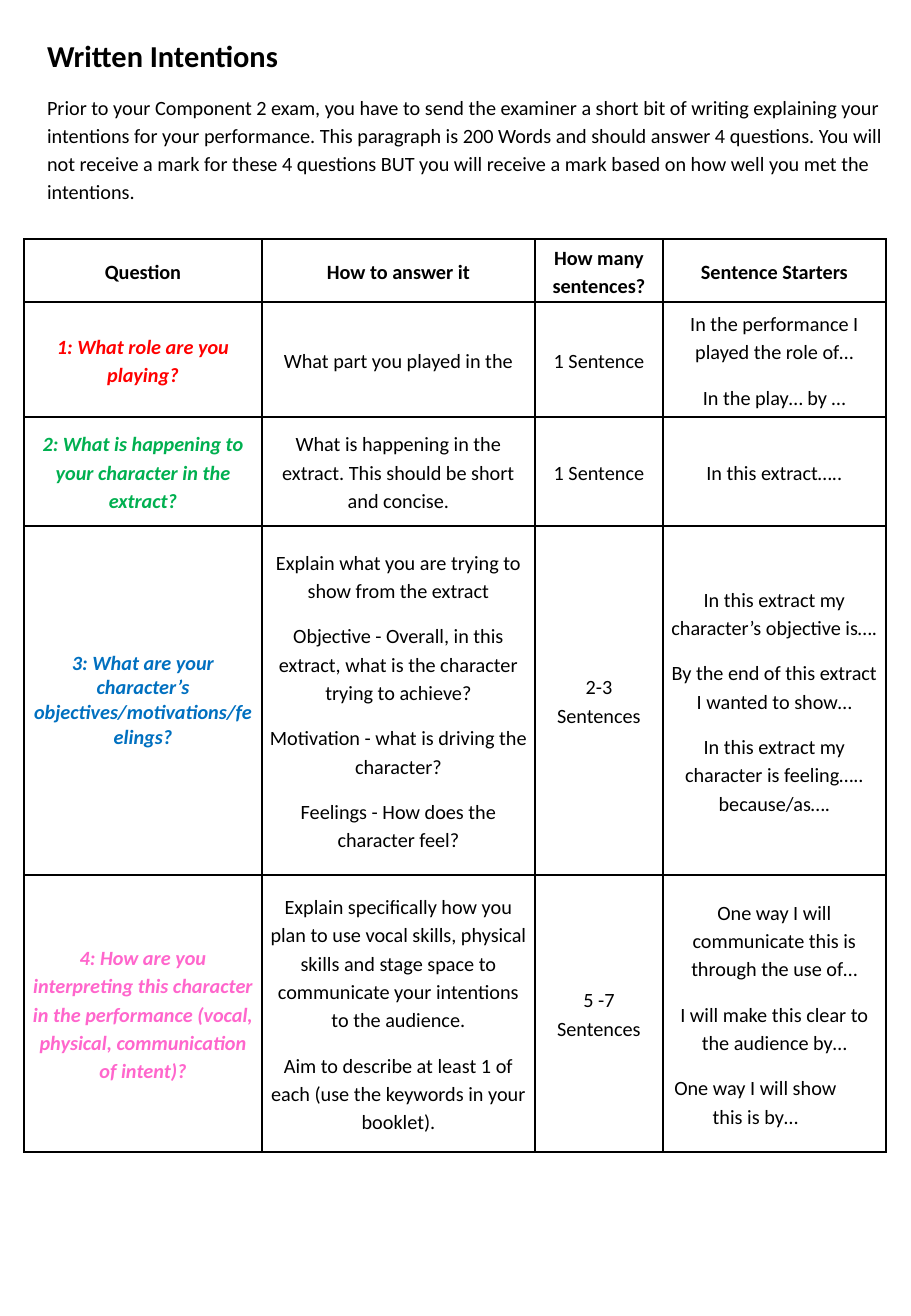
import pptx
import pptx.util
import pptx.dml.color
import pptx.enum.text
import pptx.oxml
import pptx.oxml.ns

PX = 7526
THEME = {
    "font": "Calibri", "title": 18, "text": 12,
    "ink": "000000", "paper": "FFFFFF",
    "questions": ["FF0000", "00B050", "0070C0", "FF66CC"],
}
ALIGN = pptx.enum.text.PP_ALIGN
ANCHOR = pptx.enum.text.MSO_ANCHOR
RGB = pptx.dml.color.RGBColor.from_string


def add_run(p, text, size, color, bold=False, italic=False):
    r = p.add_run()
    r.text = text
    r.font.name = THEME["font"]
    r.font.size = pptx.util.Pt(size)
    r.font.color.rgb = RGB(color)
    r.font.bold = bold
    r.font.italic = italic


def format_paragraph(p, align, after, spacing=1.15):
    p.alignment = align
    p.line_spacing = spacing
    p.space_before = pptx.util.Pt(0)
    p.space_after = pptx.util.Pt(after)


prs = pptx.Presentation()
prs.slide_width = 911 * PX
prs.slide_height = 1316 * PX
s = prs.slides.add_slide(prs.slide_layouts[1])

intro = (
    "Prior to your Component 2 exam, you have to send the examiner a short bit of writing "
    "explaining your intentions for your performance. This paragraph is 200 Words and should "
    "answer 4 questions. You will not receive a mark for these 4 questions BUT you will receive "
    "a mark based on how well you met the intentions."
)
headings = [
    (s.shapes.title, 26, 56, "Written Intentions", THEME["title"], True),
    (s.placeholders[1], 86, 126, intro, THEME["text"], False),
]
for sp, top, height, text, size, bold in headings:
    sp.left, sp.top, sp.width, sp.height = 35 * PX, top * PX, 863 * PX, height * PX
    tf = sp.text_frame
    tf.word_wrap = True
    tf.auto_size = pptx.enum.text.MSO_AUTO_SIZE.NONE
    tf.vertical_anchor = ANCHOR.TOP
    tf.margin_left = tf.margin_right = 12 * PX
    tf.margin_top = tf.margin_bottom = 6 * PX
    p = tf.paragraphs[0]
    format_paragraph(p, ALIGN.LEFT, 0)
    pPr = p._p.get_or_add_pPr()
    pPr.set("marL", "0")
    pPr.set("indent", "0")
    pPr.append(pptx.oxml.parse_xml(f'<a:buNone {pptx.oxml.ns.nsdecls("a")}/>'))
    add_run(p, text, size, THEME["ink"], bold)

rows = [
    [["Question"], ["How to answer it"], ["How many sentences?"], ["Sentence Starters"]],
    [
        ["1: What role are you playing?"],
        ["What part you played in the"],
        ["1 Sentence"],
        ["In the performance I played the role of…", "In the play… by …"],
    ],
    [
        ["2: What is happening to your character in the extract?"],
        ["What is happening in the extract. This should be short and concise."],
        ["1 Sentence"],
        ["In this extract….."],
    ],
    [
        ["3: What are your character’s objectives/motivations/feelings?"],
        [
            "Explain what you are trying to show from the extract",
            "Objective - Overall, in this extract, what is the character trying to achieve?",
            "Motivation - what is driving the character?",
            "Feelings - How does the character feel?",
        ],
        ["2-3 Sentences"],
        [
            "In this extract my character’s objective is….",
            "By the end of this extract I wanted to show…",
            "In this extract my character is feeling….. because/as….",
        ],
    ],
    [
        ["4: How are you interpreting this character in the performance "
         "(vocal, physical, communication of intent)?"],
        [
            "Explain specifically how you plan to use vocal skills, physical skills and stage "
            "space to communicate your intentions to the audience.",
            "Aim to describe at least 1 of each (use the keywords in your booklet).",
        ],
        ["5 -7 Sentences"],
        [
            "One way I will communicate this is through the use of…",
            "I will make this clear to the audience by…",
            "One way I will show this is by…",
        ],
    ],
]
widths = [238, 273, 128, 223]
heights = [63, 115, 109, 349, 277]

frame = s.shapes.add_table(len(rows), len(widths), 24 * PX, 239 * PX,
                           sum(widths) * PX, sum(heights) * PX)
table = frame.table
table.first_row = table.horz_banding = False
for column, width in zip(table.columns, widths):
    column.width = width * PX
for row, height in zip(table.rows, heights):
    row.height = height * PX

for i, row in enumerate(rows):
    for j, texts in enumerate(row):
        cell = table.cell(i, j)
        cell.vertical_anchor = ANCHOR.MIDDLE
        cell.margin_left = cell.margin_right = 7 * PX
        cell.margin_top = cell.margin_bottom = 0
        cell.fill.solid()
        cell.fill.fore_color.rgb = RGB(THEME["paper"])
        tcPr = cell._tc.get_or_add_tcPr()
        for k, side in enumerate(["lnL", "lnR", "lnT", "lnB"]):
            tcPr.insert(k, pptx.oxml.parse_xml(
                f'<a:{side} {pptx.oxml.ns.nsdecls("a")} w="{pptx.util.Pt(1)}"><a:solidFill>'
                f'<a:srgbClr val="{THEME["ink"]}"/></a:solidFill></a:{side}>'))
        question = i > 0 and j == 0
        color = THEME["questions"][i - 1] if question else THEME["ink"]
        tf = cell.text_frame
        for k, text in enumerate(texts):
            p = tf.add_paragraph() if k else tf.paragraphs[0]
            format_paragraph(p, ALIGN.CENTER, 10, 1.0 if question and i == 3 else 1.15)
            add_run(p, text, THEME["text"], color, i == 0 or question, question)

last_starter = table.cell(4, 3).text_frame.paragraphs[-1]
last_starter._p.get_or_add_pPr().set("marR", str(38 * PX))

prs.save("out.pptx")
